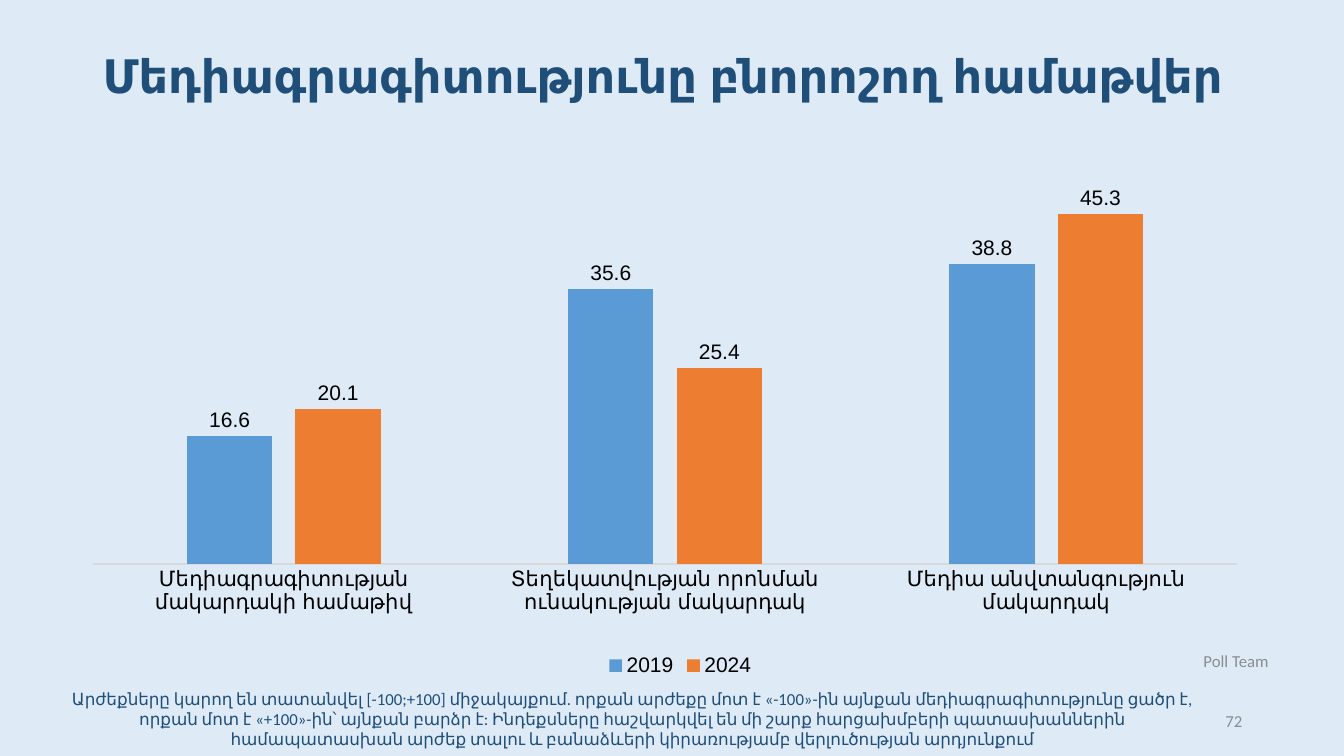
"""Builds the slide on media literacy indices for 2019 and 2024."""
from lxml import etree
from pptx import Presentation
from pptx import util as u
from pptx.chart.data import CategoryChartData
from pptx.dml.color import RGBColor
from pptx.enum import chart as ch, text
from pptx.oxml.ns import qn

COLORS = {"bg": "DEEBF7", "navy": "1F4E79", "grey": "8C8C8C", "black": "000000",
          "axis": "D9D9D9", "2019": "5B9BD5", "2024": "ED7D31"}
VALUES = {"2019": (16.6, 35.6, 38.8), "2024": (20.1, 25.4, 45.3)}
CATEGORIES = ["Մեդիագրագիտության մակարդակի համաթիվ",
              "Տեղեկատվության որոնման ունակության մակարդակ",
              "Մեդիա անվտանգություն մակարդակ"]
NOTE = ("Արժեքները կարող են տատանվել [-100;+100] միջակայքում. որքան արժեքը մոտ է "
        "«-100»-ին այնքան մեդիագրագիտությունը ցածր է, որքան մոտ է «+100»-ին՝ այնքան "
        "բարձր է: Ինդեքսները հաշվարկվել են մի շարք հարցախմբերի պատասխաններին "
        "համապատասխան արժեք տալու և բանաձևերի կիրառությամբ վերլուծության արդյունքում")
PLOT = {"x": 0, "y": 0.016, "w": 0.974, "h": 0.755}


def rgb(name):
    return RGBColor.from_string(COLORS[name])


def style(font, size, color, name="Arial", bold=False):
    font.size, font.name, font.bold = u.Pt(size), name, bold
    font.color.rgb = rgb(color)


prs = Presentation()
prs.slide_width, prs.slide_height = u.Inches(13.33), u.Inches(7.5)
slide = prs.slides.add_slide(prs.slide_layouts[6])
slide.background.fill.solid()
slide.background.fill.fore_color.rgb = rgb("bg")

data = CategoryChartData(number_format="0.0")
data.categories = CATEGORIES
for year, values in VALUES.items():
    data.add_series(year, values)
box = [u.Inches(n) for n in (0.92, 1.68, 11.65, 5.08)]
chart = slide.shapes.add_chart(ch.XL_CHART_TYPE.COLUMN_CLUSTERED, *box, data).chart
style(chart.font, 15, "black")
chart.has_title = False
chart.has_legend = True
chart.legend.position = ch.XL_LEGEND_POSITION.BOTTOM
chart.legend.include_in_layout = False
style(chart.legend.font, 15, "black")

axis = chart.category_axis
axis.major_tick_mark = ch.XL_TICK_MARK.NONE
axis.format.line.color.rgb = rgb("axis")
axis.format.line.width = u.Pt(0.75)
style(axis.tick_labels.font, 15, "black")
chart.value_axis.visible = False
chart.value_axis.has_major_gridlines = False
chart.value_axis.minimum_scale, chart.value_axis.maximum_scale = 0, 50

plot = chart.plots[0]
plot.gap_width, plot.overlap, plot.vary_by_categories = 219, -27, False
for series in plot.series:
    series.format.fill.solid()
    series.format.fill.fore_color.rgb = rgb(series.name)
    labels = series.data_labels
    labels.show_value = True
    labels.position = ch.XL_LABEL_POSITION.OUTSIDE_END
    style(labels.font, 15, "black")

area = chart.element.find(".//" + qn("c:plotArea"))
layout = area.find(qn("c:layout"))
if layout is None:
    layout = etree.Element(qn("c:layout"))
    area.insert(0, layout)
manual = etree.SubElement(layout, qn("c:manualLayout"))
settings = {"layoutTarget": "inner", "xMode": "edge", "yMode": "edge", **PLOT}
for tag, value in settings.items():
    etree.SubElement(manual, qn("c:" + tag)).set("val", str(value))

LEFT, CENTER, RIGHT = text.PP_ALIGN.LEFT, text.PP_ALIGN.CENTER, text.PP_ALIGN.RIGHT
for words, place, align, font in (
        ("Մեդիագրագիտությունը բնորոշող համաթվեր", (0.92, 0.4, 11.5, 0.76), LEFT,
         (33, "navy", "Arial", True)),
        ("72", (9.42, 6.95, 3, 0.4), RIGHT, (12, "grey", "Calibri")),
        (NOTE, (0.6, 6.76, 11.35, 0.74), CENTER, (12, "navy", "Calibri")),
        ("Poll Team", (11.43, 6.36, 1.66, 0.4), CENTER, (12, "grey", "Calibri"))):
    tf = slide.shapes.add_textbox(*[u.Inches(n) for n in place]).text_frame
    tf.word_wrap = True
    tf.vertical_anchor = text.MSO_ANCHOR.MIDDLE
    p = tf.paragraphs[0]
    p.text, p.alignment = words, align
    p.line_spacing = 0.9 if font[0] == 33 else 1.0
    style(p.font, *font)

prs.save("out.pptx")
